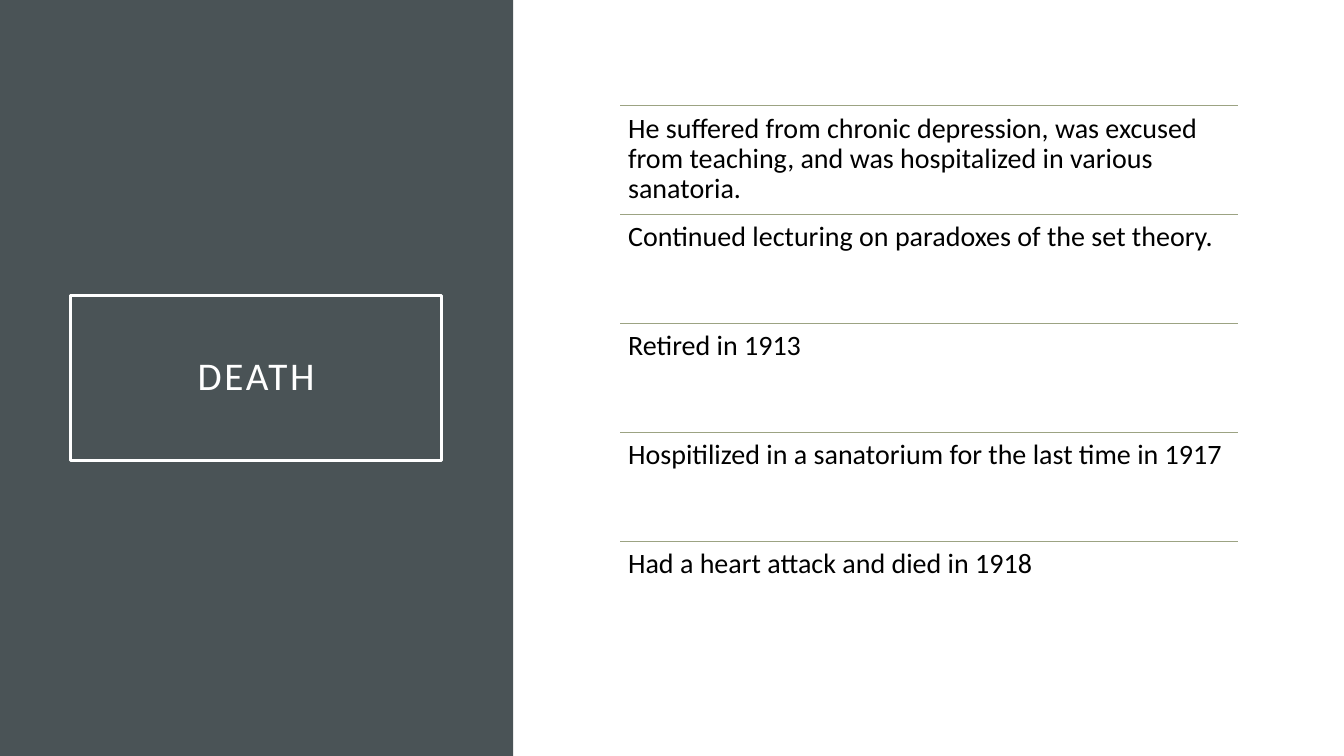
from dataclasses import dataclass

from lxml.etree import SubElement
from pptx import Presentation
from pptx.dml.color import RGBColor
from pptx.enum.shapes import MSO_CONNECTOR, MSO_SHAPE
from pptx.enum.text import MSO_ANCHOR, PP_ALIGN
from pptx.oxml.ns import qn
from pptx.shapes.group import GroupShape
from pptx.slide import Slide
from pptx.text.text import TextFrame
from pptx.util import Inches, Pt

SLATE = RGBColor(0x4A, 0x53, 0x56)
SAGE = RGBColor(0x9C, 0xA3, 0x83)
WHITE = RGBColor(0xFF, 0xFF, 0xFF)
BLACK = RGBColor(0x00, 0x00, 0x00)
FONT = "Calibri"

LIST_LEFT = 6.15
LIST_TOP = 1.05
LIST_WIDTH = 6.13
ROW_HEIGHT = 1.08


@dataclass(frozen=True)
class TextStyle:
    size: float
    color: RGBColor
    inset: float
    alignment: PP_ALIGN
    anchor: MSO_ANCHOR
    letter_spacing: float = 0
    space_after: float = 0


@dataclass(frozen=True)
class Event:
    row: int
    text: str

    @property
    def top(self) -> float:
        return LIST_TOP + self.row * ROW_HEIGHT


TITLE_STYLE = TextStyle(28, WHITE, 0.2, PP_ALIGN.CENTER, MSO_ANCHOR.MIDDLE, letter_spacing=2)
EVENT_STYLE = TextStyle(20, BLACK, 0.08, PP_ALIGN.LEFT, MSO_ANCHOR.TOP, space_after=7)

EVENT_TEXTS = (
    "He suffered from chronic depression, was excused from teaching, "
    "and was hospitalized in various sanatoria.",
    "Continued lecturing on paradoxes of the set theory.",
    "Retired in 1913",
    "Hospitilized in a sanatorium for the last time in 1917",
    "Had a heart attack and died in 1918",
)
EVENTS = [Event(row, text) for row, text in enumerate(EVENT_TEXTS)]


def write_text(frame: TextFrame, text: str, style: TextStyle) -> None:
    frame.text = text
    frame.word_wrap = True
    frame.vertical_anchor = style.anchor
    frame.margin_left = frame.margin_right = Inches(style.inset)
    frame.margin_top = frame.margin_bottom = Inches(style.inset)
    para = frame.paragraphs[0]
    para.alignment = style.alignment
    para.line_spacing = 0.9
    para.space_after = Pt(style.space_after)
    span = para.runs[0]
    span.font.name = FONT
    span.font.size = Pt(style.size)
    span.font.color.rgb = style.color
    if style.letter_spacing:
        span.font._element.set("spc", str(round(style.letter_spacing * 100)))


def draw_panel(page: Slide) -> None:
    panel = page.shapes.add_shape(
        MSO_SHAPE.RECTANGLE, Inches(0), Inches(0), Inches(5.09), Inches(7.5)
    )
    panel.shadow.inherit = False
    panel.fill.solid()
    panel.fill.fore_color.rgb = SLATE
    panel.line.fill.background()


def draw_title(page: Slide) -> None:
    box = page.shapes.add_textbox(Inches(0.7), Inches(2.93), Inches(3.68), Inches(1.64))
    box.line.color.rgb = WHITE
    box.line.width = Pt(2.5)
    write_text(box.text_frame, "DEATH", TITLE_STYLE)


def draw_event(group: GroupShape, event: Event) -> None:
    left, top, width = Inches(LIST_LEFT), Inches(event.top), Inches(LIST_WIDTH)
    rule = group.shapes.add_connector(MSO_CONNECTOR.STRAIGHT, left, top, left + width, top)
    rule.line.color.rgb = SAGE
    rule.line.width = Pt(0.5)
    SubElement(rule._element.spPr, qn("a:effectLst"))
    box = group.shapes.add_textbox(left, top, width, Inches(ROW_HEIGHT))
    write_text(box.text_frame, event.text, EVENT_STYLE)


def main() -> None:
    deck = Presentation()
    deck.slide_width = Inches(13.33)
    deck.slide_height = Inches(7.5)
    page = deck.slides.add_slide(deck.slide_layouts[6])
    page.background.fill.solid()
    page.background.fill.fore_color.rgb = WHITE
    draw_panel(page)
    draw_title(page)
    event_list = page.shapes.add_group_shape()
    for event in EVENTS:
        draw_event(event_list, event)
    deck.save("out.pptx")


if __name__ == "__main__":
    main()
